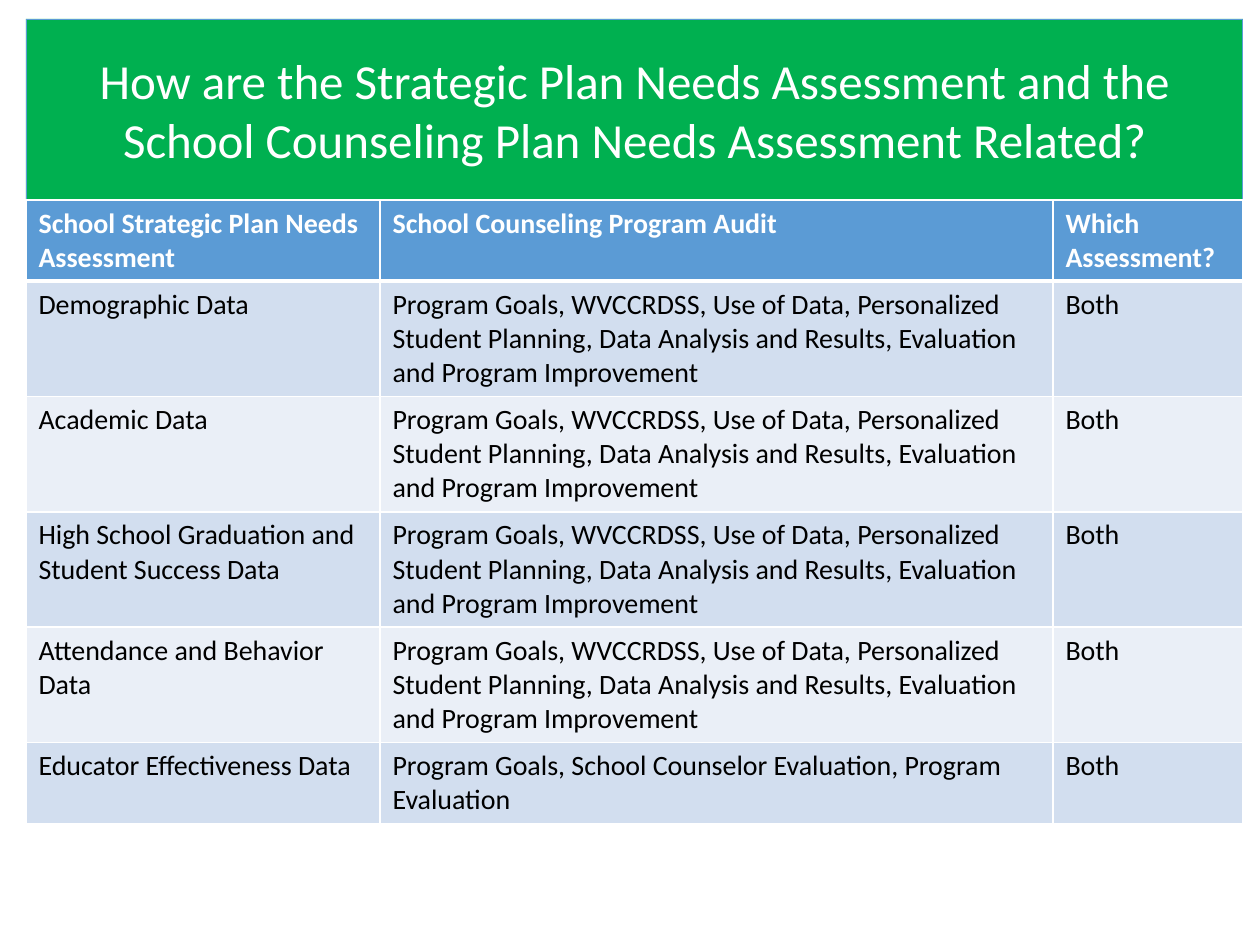
"""Build a slide relating two school needs assessments in a table."""

from dataclasses import dataclass

from lxml.etree import SubElement
from pptx import Presentation
from pptx.dml.color import RGBColor
from pptx.enum.shapes import MSO_SHAPE
from pptx.enum.text import MSO_ANCHOR, PP_ALIGN
from pptx.oxml.ns import qn
from pptx.slide import Slide
from pptx.table import _Cell
from pptx.text.text import _Paragraph
from pptx.util import Emu, Pt

PX_PER_INCH = 126


@dataclass(frozen=True)
class Theme:
    font: str = "Calibri"
    banner: str = "00B050"
    accent: str = "5B9BD5"
    bands: tuple[str, str] = ("D2DEEF", "EAEFF7")
    light: str = "FFFFFF"
    dark: str = "000000"
    title_size: int = 28
    table_size: int = 16
    banner_line: float = 0.5
    rule: int = 1
    header_rule: int = 3


@dataclass(frozen=True)
class Box:
    left: int
    top: int
    width: int
    height: int


@dataclass(frozen=True)
class Comparison:
    data: str
    audit: str
    assessment: str
    height: int = 115


@dataclass(frozen=True)
class CellStyle:
    fill: str
    color: str
    bold: bool
    top_rule: int
    bottom_rule: int


THEME = Theme()
BANNER = Box(26, 19, 1217, 181)
COLUMN_WIDTHS = (354, 673, 190)
TITLE = (
    "How are the Strategic Plan Needs Assessment and the "
    "School Counseling Plan Needs Assessment Related?"
)
FULL_AUDIT = (
    "Program Goals, WVCCRDSS, Use of Data, Personalized Student Planning, "
    "Data Analysis and Results, Evaluation and Program Improvement"
)
COMPARISONS = (
    Comparison(
        "School Strategic Plan Needs Assessment",
        "School Counseling Program Audit",
        "Which Assessment?",
        81,
    ),
    Comparison("Demographic Data", FULL_AUDIT, "Both"),
    Comparison("Academic Data", FULL_AUDIT, "Both"),
    Comparison("High School Graduation and Student Success Data", FULL_AUDIT, "Both"),
    Comparison("Attendance and Behavior Data", FULL_AUDIT, "Both"),
    Comparison(
        "Educator Effectiveness Data",
        "Program Goals, School Counselor Evaluation, Program Evaluation",
        "Both",
        81,
    ),
)


def px(length: int) -> Emu:
    return Emu(round(length * 914400 / PX_PER_INCH))


def rgb(color: str) -> RGBColor:
    return RGBColor.from_string(color)


def add_run(
    paragraph: _Paragraph, text: str, size: int, color: str, bold: bool = False
) -> None:
    run = paragraph.add_run()
    run.text = text
    run.font.name = THEME.font
    run.font.size = Pt(size)
    run.font.bold = bold
    run.font.color.rgb = rgb(color)


def add_banner(slide: Slide, box: Box, title: str) -> None:
    banner = slide.shapes.add_shape(
        MSO_SHAPE.RECTANGLE, px(box.left), px(box.top), px(box.width), px(box.height)
    )
    banner.shadow.inherit = False
    banner.fill.solid()
    banner.fill.fore_color.rgb = rgb(THEME.banner)
    banner.line.color.rgb = rgb(THEME.accent)
    banner.line.width = Pt(THEME.banner_line)
    banner.text_frame.word_wrap = True
    banner.text_frame.vertical_anchor = MSO_ANCHOR.MIDDLE
    heading = banner.text_frame.paragraphs[0]
    heading.alignment = PP_ALIGN.CENTER
    add_run(heading, title, THEME.title_size, THEME.light)


def add_rule(cell: _Cell, side: str, width: int) -> None:
    properties = cell._tc.get_or_add_tcPr()
    rule = SubElement(properties, qn(f"a:ln{side}"), w=str(Pt(width)))
    fill = SubElement(rule, qn("a:solidFill"))
    SubElement(fill, qn("a:srgbClr"), val=THEME.light)


def fill_cell(cell: _Cell, text: str, style: CellStyle) -> None:
    add_rule(cell, "L", THEME.rule)
    add_rule(cell, "R", THEME.rule)
    add_rule(cell, "T", style.top_rule)
    add_rule(cell, "B", style.bottom_rule)
    cell.fill.solid()
    cell.fill.fore_color.rgb = rgb(style.fill)
    add_run(
        cell.text_frame.paragraphs[0], text, THEME.table_size, style.color, style.bold
    )


def row_style(index: int) -> CellStyle:
    if index == 0:
        return CellStyle(THEME.accent, THEME.light, True, THEME.rule, THEME.header_rule)
    top_rule = THEME.header_rule if index == 1 else THEME.rule
    band = THEME.bands[(index - 1) % 2]
    return CellStyle(band, THEME.dark, False, top_rule, THEME.rule)


def add_comparison_table(
    slide: Slide, left: int, top: int, comparisons: tuple[Comparison, ...]
) -> None:
    table = slide.shapes.add_table(
        len(comparisons),
        len(COLUMN_WIDTHS),
        px(left),
        px(top),
        px(sum(COLUMN_WIDTHS)),
        px(sum(comparison.height for comparison in comparisons)),
    ).table
    for column, width in zip(table.columns, COLUMN_WIDTHS):
        column.width = px(width)
    for index, (row, comparison) in enumerate(zip(table.rows, comparisons)):
        row.height = px(comparison.height)
        texts = (comparison.data, comparison.audit, comparison.assessment)
        for cell, text in zip(row.cells, texts):
            fill_cell(cell, text, row_style(index))


def main() -> None:
    presentation = Presentation()
    presentation.slide_width = px(1260)
    presentation.slide_height = px(945)
    slide = presentation.slides.add_slide(presentation.slide_layouts[6])
    add_banner(slide, BANNER, TITLE)
    add_comparison_table(slide, BANNER.left, BANNER.top + BANNER.height, COMPARISONS)
    presentation.save("out.pptx")


if __name__ == "__main__":
    main()
